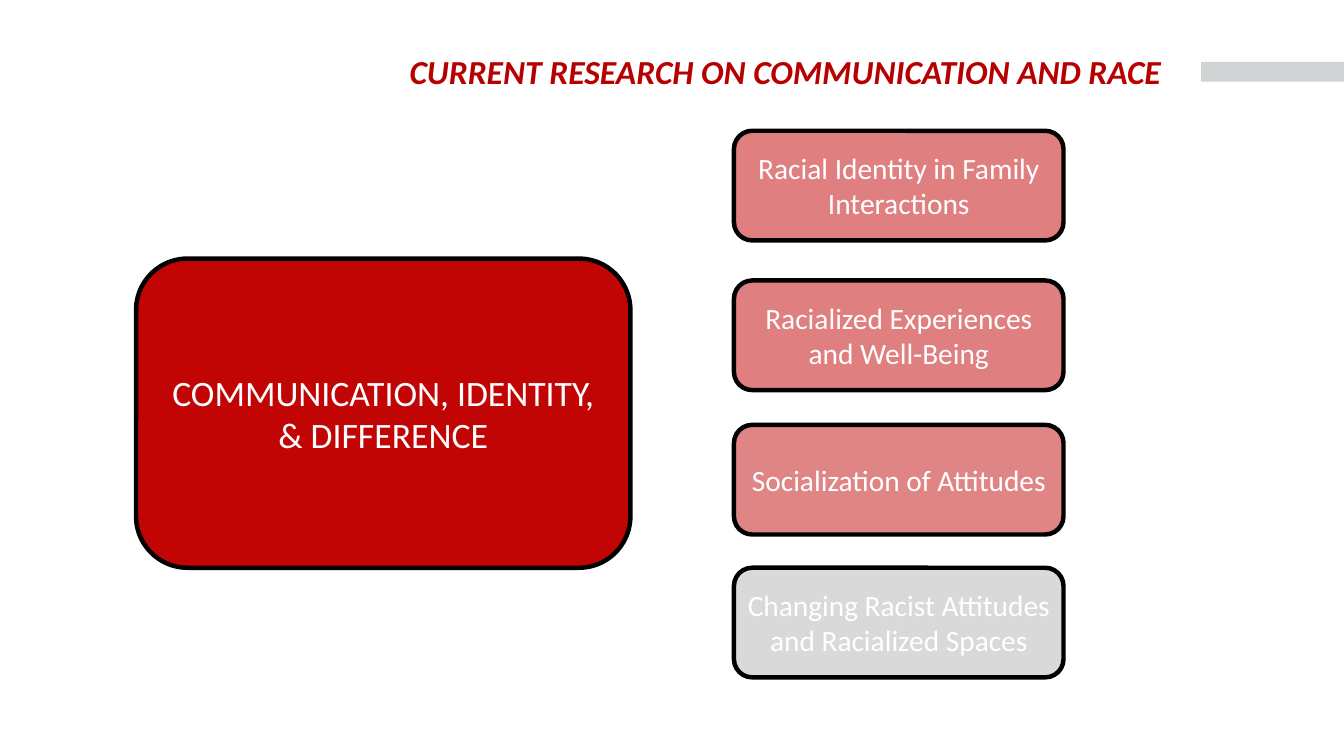
"""Build a slide on current research on communication and race."""
from dataclasses import dataclass

from lxml import etree
from pptx import Presentation
from pptx.dml.color import RGBColor
from pptx.enum.shapes import MSO_SHAPE
from pptx.enum.text import MSO_ANCHOR, PP_ALIGN
from pptx.oxml.ns import qn
from pptx.util import Inches, Pt

RECTANGLE = MSO_SHAPE.RECTANGLE
ROUNDED = MSO_SHAPE.ROUNDED_RECTANGLE
MIDDLE, TOP = MSO_ANCHOR.MIDDLE, MSO_ANCHOR.TOP
CENTER, RIGHT = PP_ALIGN.CENTER, PP_ALIGN.RIGHT

WHITE = RGBColor(0xFF, 0xFF, 0xFF)
BLACK = RGBColor(0, 0, 0)
RED = RGBColor(0xC0, 0, 0)
TITLE_RED = RGBColor(0xB7, 0, 0)
GRAY = RGBColor(0xD9, 0xD9, 0xD9)
BAR_GRAY = RGBColor(0xD1, 0xD3, 0xD4)

FONT = "Calibri"
SLIDE_WIDTH, SLIDE_HEIGHT = 17.78, 10
TOPIC_LEFT, TOPIC_WIDTH, TOPIC_HEIGHT = 9.71, 4.36, 1.45


@dataclass
class Topic:
    """A research topic in the right-hand column."""
    text: str
    top: float
    fill: RGBColor = RED
    opacity: int = 50


TOPICS = [
    Topic("Racial Identity in Family Interactions", 1.73),
    Topic("Racialized Experiences and Well-Being", 3.71),
    Topic("Socialization of Attitudes", 5.62, opacity=48),
    Topic("Changing Racist Attitudes and Racialized Spaces", 7.51, GRAY, 100),
]


def write_text(shape, text: str, *, size: float, color: RGBColor = WHITE,
               align=CENTER, anchor=MIDDLE, bold: bool = False,
               italic: bool = False) -> None:
    """Put one formatted paragraph into a shape."""
    frame = shape.text_frame
    frame.word_wrap = True
    frame.vertical_anchor = anchor
    paragraph = frame.paragraphs[0]
    paragraph.alignment = align
    run = paragraph.add_run()
    run.text = text
    font = run.font
    font.name, font.size = FONT, Pt(size)
    font.bold, font.italic = bold, italic
    font.color.rgb = color


def add_block(slide, kind, left: float, top: float, width: float,
              height: float, fill: RGBColor, opacity: int = 100):
    """Add a filled shape without an outline."""
    shape = slide.shapes.add_shape(
        kind, Inches(left), Inches(top), Inches(width), Inches(height))
    shape.shadow.inherit = False
    shape.fill.solid()
    shape.fill.fore_color.rgb = fill
    shape.line.fill.background()
    if opacity < 100:
        color = shape.fill._xPr.find(".//" + qn("a:srgbClr"))
        etree.SubElement(color, qn("a:alpha"), val=str(opacity * 1000))
    return shape


def add_card(slide, left: float, top: float, width: float, height: float,
             fill: RGBColor, opacity: int, text: str, size: float) -> None:
    """Add a rounded card with a heavy outline and centred text."""
    card = add_block(slide, ROUNDED, left, top, width, height, fill, opacity)
    card.line.color.rgb = BLACK
    card.line.width = Pt(4.25)
    write_text(card, text, size=size)


def add_title(slide, text: str) -> None:
    """Place and format the title placeholder."""
    title = slide.shapes.title
    title.left, title.top = Inches(3.39), Inches(0.67)
    title.width, title.height = Inches(12.08), Inches(0.53)
    frame = title.text_frame
    frame.margin_left = frame.margin_right = 0
    frame.margin_top = frame.margin_bottom = 0
    write_text(title, text, size=32, color=TITLE_RED, align=RIGHT,
               anchor=TOP, bold=True, italic=True)


def main() -> None:
    """Create and save the presentation."""
    presentation = Presentation()
    presentation.slide_width = Inches(SLIDE_WIDTH)
    presentation.slide_height = Inches(SLIDE_HEIGHT)
    slide = presentation.slides.add_slide(presentation.slide_layouts[5])
    add_title(slide, "CURRENT RESEARCH ON COMMUNICATION AND RACE ")
    bar_left = 15.89
    add_block(slide, RECTANGLE, bar_left, 0.82, SLIDE_WIDTH - bar_left, 0.26,
              BAR_GRAY)
    add_card(slide, 1.8, 3.42, 6.54, 4.09, RED, 98,
             "COMMUNICATION, IDENTITY, & DIFFERENCE", 34)
    for topic in TOPICS:
        add_card(slide, TOPIC_LEFT, topic.top, TOPIC_WIDTH, TOPIC_HEIGHT,
                 topic.fill, topic.opacity, topic.text, 28)
    presentation.save("out.pptx")


if __name__ == "__main__":
    main()
